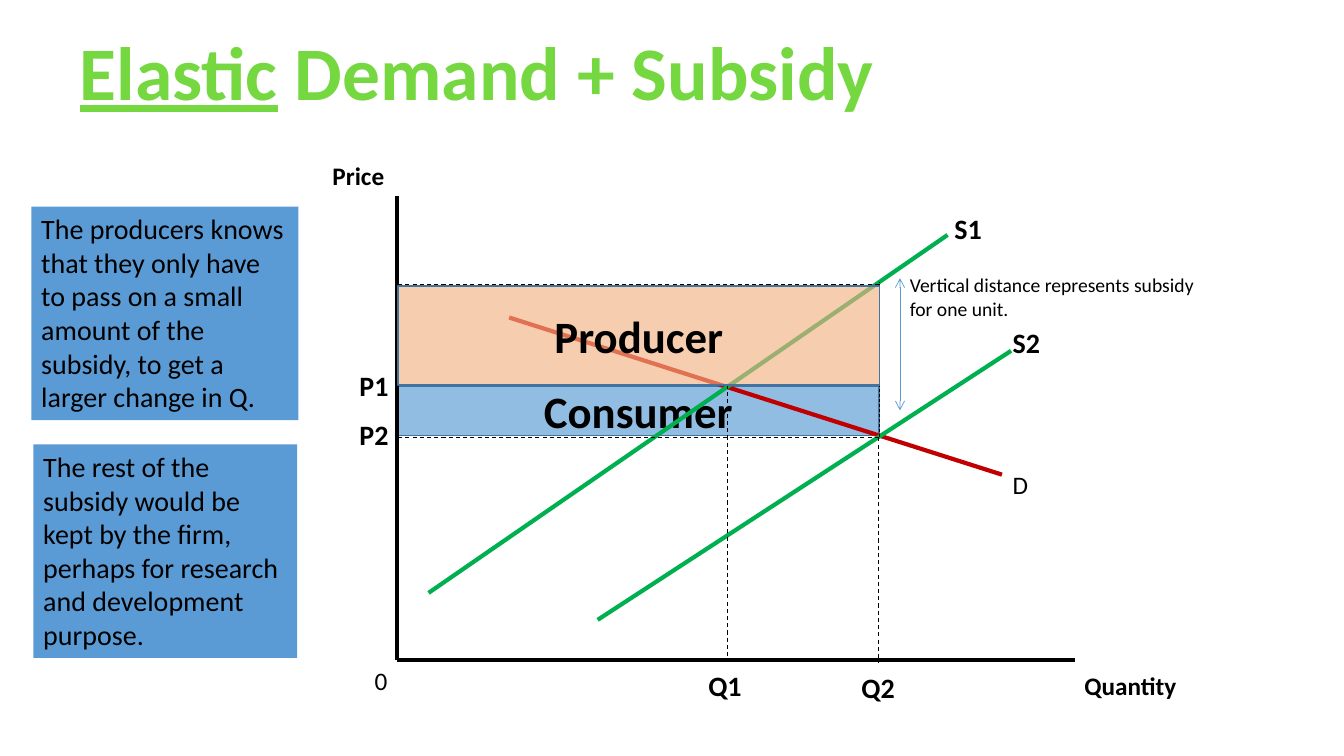
from lxml import etree
from pptx import Presentation
from pptx.dml.color import RGBColor
from pptx.enum.dml import MSO_LINE
from pptx.enum.shapes import MSO_CONNECTOR, MSO_SHAPE
from pptx.enum.text import MSO_ANCHOR, MSO_AUTO_SIZE, PP_ALIGN
from pptx.oxml.ns import qn
from pptx.util import Cm, Pt

STRAIGHT = MSO_CONNECTOR.STRAIGHT
RECTANGLE = MSO_SHAPE.RECTANGLE
DASH = MSO_LINE.DASH
TOP, MIDDLE = MSO_ANCHOR.TOP, MSO_ANCHOR.MIDDLE
LEFT, CENTER = PP_ALIGN.LEFT, PP_ALIGN.CENTER
NO_AUTOFIT = MSO_AUTO_SIZE.NONE

COLORS = {
    "title": "75D840",
    "text": "000000",
    "blue": "5B9BD5",
    "orange": "F4B183",
    "edge": "43739E",
    "demand": "C00000",
    "supply": "00B050",
}


class Deck:
    font = "Calibri"

    def __init__(self):
        self.prs = Presentation()
        self.prs.slide_width, self.prs.slide_height = Cm(33.87), Cm(19.05)
        self.s = self.prs.slides.add_slide(self.prs.slide_layouts[5])

    def color(self, name):
        return RGBColor.from_string(COLORS[name])

    def style(self, p, size, bold, align=LEFT, color="text"):
        p.alignment = align
        p.font.name, p.font.size, p.font.bold = self.font, Pt(size), bold
        p.font.color.rgb = self.color(color)

    def title(self, underlined, rest, box):
        sp = self.s.shapes.title
        sp.left, sp.top, sp.width, sp.height = map(Cm, box)
        tf = sp.text_frame
        tf.word_wrap, tf.auto_size = False, NO_AUTOFIT
        tf.vertical_anchor = TOP
        p = tf.paragraphs[0]
        r = p.add_run()
        r.text, r.font.underline = underlined, True
        p.add_run().text = rest
        self.style(p, 54, True, CENTER, "title")

    def label(self, text, x, y, w, h=1.12, size=20, bold=True, wrap=True):
        sp = self.s.shapes.add_textbox(Cm(x), Cm(y), Cm(w), Cm(h))
        tf = sp.text_frame
        tf.word_wrap, tf.text = wrap, text
        self.style(tf.paragraphs[0], size, bold)

    def rect(self, text, box, fill, size, bold=False, align=LEFT, anchor=TOP,
             opacity=100, edge=None):
        sp = self.s.shapes.add_shape(RECTANGLE, *map(Cm, box))
        sp.shadow.inherit = False
        sp.fill.solid()
        sp.fill.fore_color.rgb = self.color(fill)
        if opacity < 100:
            rgb = sp.fill._xPr.find(".//" + qn("a:srgbClr"))
            etree.SubElement(rgb, qn("a:alpha")).set("val", str(opacity * 1000))
        if edge:
            sp.line.color.rgb, sp.line.width = self.color(edge), Pt(1)
        else:
            sp.line.fill.background()
        tf = sp.text_frame
        tf.word_wrap, tf.vertical_anchor, tf.text = True, anchor, text
        self.style(tf.paragraphs[0], size, bold, align)

    def line(self, x1, y1, x2, y2, color="text", width=3, dash=None, arrows=False):
        sp = self.s.shapes.add_connector(STRAIGHT, Cm(x1), Cm(y1), Cm(x2), Cm(y2))
        sp.line.color.rgb, sp.line.width = self.color(color), Pt(width)
        if dash:
            sp.line.dash_style = dash
        if arrows:
            for end in ("a:headEnd", "a:tailEnd"):
                etree.SubElement(sp.line._ln, qn(end)).set("type", "arrow")
        etree.SubElement(sp._element.spPr, qn("a:effectLst"))

    def guide(self, x1, y1, x2, y2, width=0.75):
        self.line(x1, y1, x2, y2, width=width, dash=DASH)

    def area(self, text, box, fill, opacity):
        self.rect(text, box, fill, 32, True, CENTER, MIDDLE, opacity, "edge")


def main():
    deck = Deck()
    axis_x, axis_y = 10.01, 16.64
    q1, q2 = 18.34, 22.15
    p1, p2, top = 9.7, 11.02, 7.16

    deck.title("Elastic", " Demand + Subsidy", (1.65, 0.51, 20.73, 2.57))
    deck.area("Consumer", (10.03, 9.73, 12.12, 1.24), "blue", 66)

    deck.line(axis_x, 4.93, axis_x, axis_y)
    deck.line(axis_x, axis_y, 27.08, axis_y)
    deck.line(12.83, 8, 25.25, 11.96, "demand")
    deck.line(10.8, 14.94, 23.88, 5.92, "supply")
    deck.line(15.06, 15.62, 25.48, 8.84, "supply")

    deck.guide(q1, p1, q1, 16.59)
    deck.guide(q1, p1, axis_x, p1)
    deck.guide(q2, p2, q2, 16.71)
    deck.guide(q2, p2, axis_x, p2)
    deck.guide(q2, p2, q2, 7.11, 0.5)
    deck.guide(q2, top, axis_x, top)
    deck.line(22.68, 7.01, 22.68, 10.34, "blue", 0.5, arrows=True)

    for text, x, y, w, bold in (
        ("Quantity", 27.08, 16.76, 4.01, True),
        ("Price", 8.13, 3.91, 3.73, True),
        ("0", 9.19, 16.64, 2.95, False),
        ("D", 25.27, 11.71, 2.67, False),
    ):
        deck.label(text, x, y, w, 1.02, 18, bold)
    for text, x, y, w in (
        ("S1", 23.8, 5.21, 3.2),
        ("S2", 25.27, 8.08, 3.2),
        ("Q1", 17.6, 16.71, 1.88),
        ("Q2", 21.46, 16.76, 2.39),
        ("P1", 8.81, 9.17, 1.6),
        ("P2", 8.81, 10.39, 1.85),
    ):
        deck.label(text, x, y, w)
    deck.label("Vertical distance represents subsidy\vfor one unit.",
               22.68, 6.76, 7.75, 1.45, 14, False, False)

    deck.rect("The producers knows that they only have to pass on a small amount "
              "of the subsidy, to get a larger change in Q.",
              (0.79, 5.21, 6.73, 5.38), "blue", 20)
    deck.rect("The rest of the subsidy would be kept by the firm, perhaps for "
              "research and development purpose.",
              (0.84, 11.2, 6.65, 5.38), "blue", 20)
    deck.area("Producer", (10.03, 7.21, 12.14, 2.49), "orange", 64)

    deck.prs.save("out.pptx")


if __name__ == "__main__":
    main()
